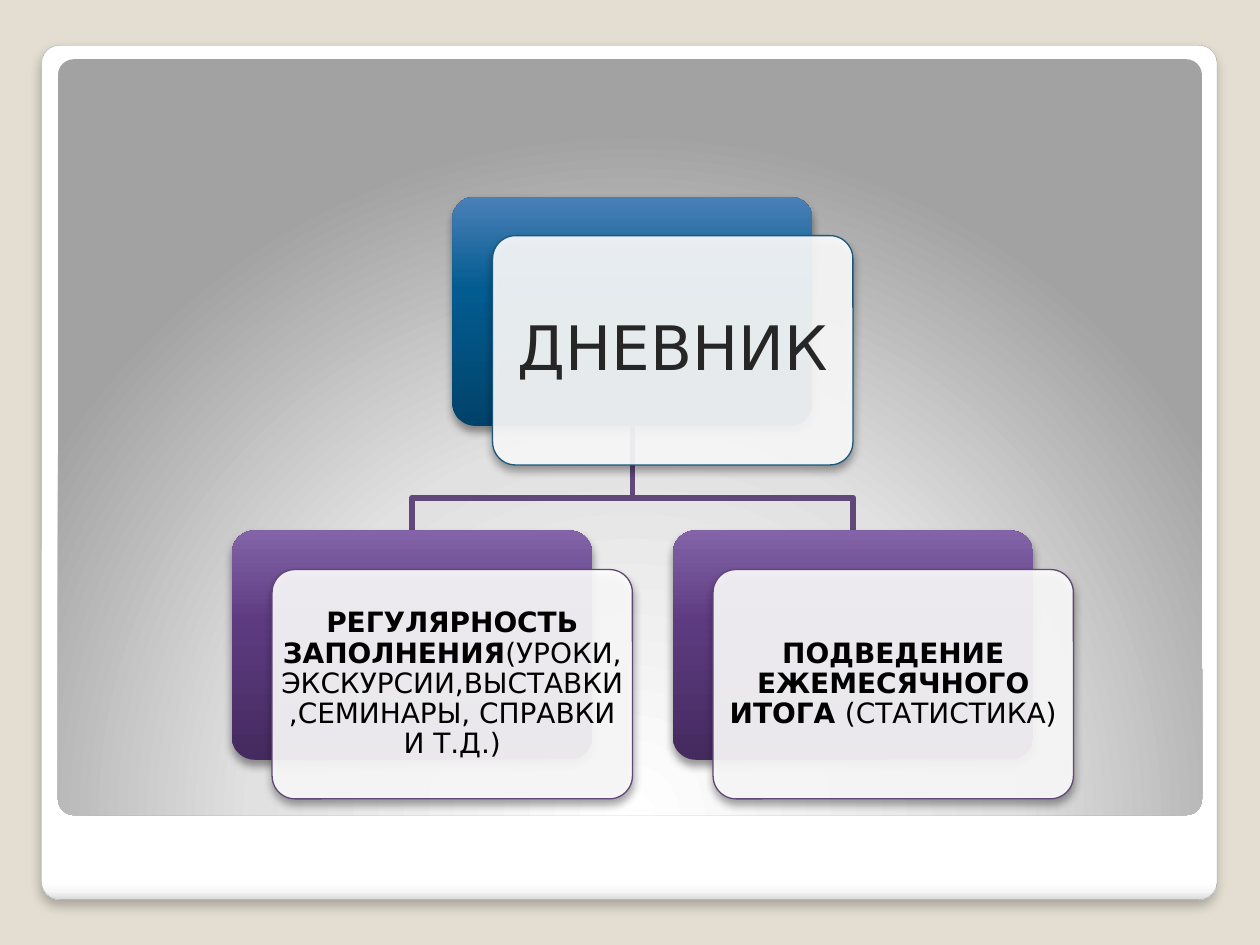
from dataclasses import dataclass

from pptx import Presentation
from pptx.dml.color import RGBColor
from pptx.enum.shapes import MSO_SHAPE
from pptx.enum.text import MSO_ANCHOR, PP_ALIGN
from pptx.oxml import parse_xml
from pptx.oxml.ns import nsdecls
from pptx.util import Inches, Pt


@dataclass(frozen=True)
class Theme:
    font: str = "DejaVu Sans"
    head: int = 35
    body: int = 16
    dark: str = "262626"
    black: str = "000000"
    white: str = "FFFFFF"
    page: str = "E3DED1"
    edge: str = "A4A4A4"
    blue: str = "1B587C"
    violet: str = "604878"
    frame: tuple = ((0, "FFFFFF"), (98, "FFFFFF"), (99, "F7F7F7"), (100, "DADADA"))
    panel: tuple = ((0, "FFFFFF"), (55, "E1E1E1"), (100, "A2A2A2"))
    blues: tuple = ((0, "00436A"), (60, "035C91"), (100, "4A80B7"))
    violets: tuple = ((0, "442A5E"), (60, "5E3B81"), (100, "8364A8"))


LINEAR = '<a:lin ang="{}" scaled="0"/>'
RADIAL = (
    '<a:path path="circle">'
    '<a:fillToRect l="50000" t="175000" r="50000" b="-75000"/></a:path>'
)
DOWN = LINEAR.format(90 * 60000)
UP = LINEAR.format(270 * 60000)

WIDE, HIGH = 2.86, 1.82
SHIFT_X, SHIFT_Y = 0.32, 0.31
TOP, LOW, BEND = 1.56, 4.21, 3.95


def write(frame, runs, size, color, font, inset):
    frame.word_wrap = True
    frame.vertical_anchor = MSO_ANCHOR.MIDDLE
    frame.margin_left = frame.margin_right = Inches(inset)
    frame.margin_top = frame.margin_bottom = Inches(inset)
    para = frame.paragraphs[0]
    para.alignment = PP_ALIGN.CENTER
    para.line_spacing = 0.9
    for words, bold in runs:
        run = para.add_run()
        run.text = words
        run.font.name = font
        run.font.size = Pt(size)
        run.font.bold = bold
        run.font.color.rgb = RGBColor.from_string(color)


class Painter:
    def __init__(self, slide, theme):
        self.slide = slide
        self.theme = theme

    def back(self):
        fill = self.slide.background.fill
        fill.solid()
        fill.fore_color.rgb = RGBColor.from_string(self.theme.page)

    def stroke(self, shape, color, width):
        shape.line.color.rgb = RGBColor.from_string(color)
        shape.line.width = Pt(width)

    def blend(self, shape, stops, course):
        marks = "".join(
            f'<a:gs pos="{pos * 1000}"><a:srgbClr val="{color}"/></a:gs>'
            for pos, color in stops
        )
        shape.fill.background()
        props = shape._element.spPr
        plain = props.xpath("./a:noFill")[0]
        props.replace(plain, parse_xml(
            f'<a:gradFill {nsdecls("a")} rotWithShape="1">'
            f"<a:gsLst>{marks}</a:gsLst>{course}</a:gradFill>"
        ))

    def shade(self, shape, alpha, blur, dist):
        effects = shape._element.spPr.xpath("./a:effectLst")[0]
        effects.append(parse_xml(
            f'<a:outerShdw {nsdecls("a")} blurRad="{Pt(blur)}" dist="{Pt(dist)}" '
            f'dir="5400000" rotWithShape="0"><a:srgbClr val="{self.theme.black}">'
            f'<a:alpha val="{alpha * 1000}"/></a:srgbClr></a:outerShdw>'
        ))

    def round(self, left, top, width, height, curve):
        shape = self.slide.shapes.add_shape(
            MSO_SHAPE.ROUNDED_RECTANGLE,
            Inches(left), Inches(top), Inches(width), Inches(height),
        )
        shape.adjustments[0] = curve
        shape.shadow.inherit = False
        shape.line.fill.background()
        return shape

    def frame(self):
        outer = self.round(0.33, 0.36, 9.33, 6.78, 0.021)
        self.blend(outer, self.theme.frame, DOWN)
        self.stroke(outer, self.theme.edge, 0.16)
        self.shade(outer, 25, 6, 4)
        inner = self.round(0.46, 0.47, 9.08, 6, 0.021)
        self.blend(inner, self.theme.panel, RADIAL)

    def branch(self, start, end):
        points = [(start, TOP + HIGH), (start, BEND), (end, BEND), (end, LOW)]
        spots = [(Inches(x), Inches(y)) for x, y in points]
        maker = self.slide.shapes.build_freeform(*spots[0])
        maker.add_line_segments(spots[1:], close=False)
        shape = maker.convert_to_shape()
        shape.fill.background()
        shape.shadow.inherit = False
        self.stroke(shape, self.theme.violet, 3.35)

    def card(self, left, top, runs, stops, edge, size, color, inset):
        rear = self.round(left, top, WIDE, HIGH, 0.1)
        self.blend(rear, stops, UP)
        self.shade(rear, 40, 5.2, 3)

        left, top = left + SHIFT_X, top + SHIFT_Y
        front = self.round(left, top, WIDE, HIGH, 0.1)
        front.fill.solid()
        front.fill.fore_color.rgb = RGBColor.from_string(self.theme.white)
        tint = front._element.spPr.xpath("./a:solidFill/a:srgbClr")[0]
        tint.append(parse_xml(f'<a:alpha {nsdecls("a")} val="90000"/>'))
        self.stroke(front, edge, 0.75)
        self.shade(front, 40, 5.2, 3)

        box = self.slide.shapes.add_textbox(
            Inches(left), Inches(top), Inches(WIDE), Inches(HIGH)
        )
        write(box.text_frame, runs, size=size, color=color,
              font=self.theme.font, inset=inset)


def main():
    deck = Presentation()
    deck.slide_width, deck.slide_height = Inches(10), Inches(7.5)
    theme = Theme()
    paint = Painter(deck.slides.add_slide(deck.slide_layouts[6]), theme)
    paint.back()
    paint.frame()

    root, step = 3.59, 1.75
    leaves = {
        root - step: [
            ("РЕГУЛЯРНОСТЬ ЗАПОЛНЕНИЯ", True),
            ("(УРОКИ,ЭКСКУРСИИ,ВЫСТАВКИ,СЕМИНАРЫ, СПРАВКИ И Т.Д.)", False),
        ],
        root + step: [
            ("ПОДВЕДЕНИЕ ЕЖЕМЕСЯЧНОГО ИТОГА ", True),
            ("(СТАТИСТИКА)", False),
        ],
    }
    for left in leaves:
        paint.branch(root + WIDE / 2, left + WIDE / 2)
    paint.card(root, TOP, [("ДНЕВНИК", False)], theme.blues, theme.blue,
               theme.head, theme.dark, 0.15)
    for left, runs in leaves.items():
        paint.card(left, LOW, runs, theme.violets, theme.violet,
                   theme.body, theme.black, 0.07)

    deck.save("out.pptx")


if __name__ == "__main__":
    main()
